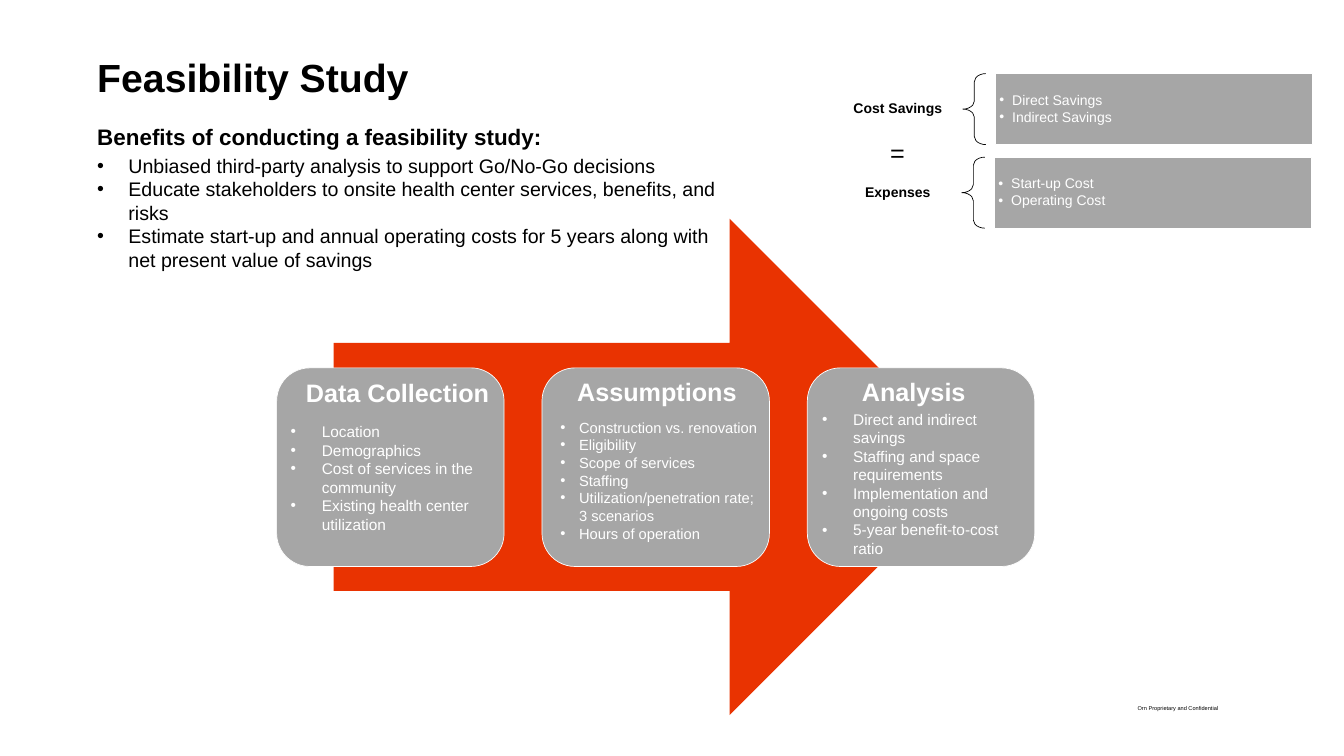
from lxml.etree import SubElement
from pptx import Presentation
from pptx.dml.color import RGBColor
from pptx.enum.shapes import MSO_SHAPE as Shape
from pptx.enum.text import MSO_ANCHOR as Anchor, MSO_AUTO_SIZE as AutoSize, PP_ALIGN as Align
from pptx.oxml.ns import qn
from pptx.util import Cm, Pt

ORANGE = RGBColor(0xE9, 0x33, 0x01)
GREY = RGBColor(0xA6, 0xA6, 0xA6)
WHITE = RGBColor(0xFF, 0xFF, 0xFF)
BLACK = RGBColor(0x00, 0x00, 0x00)

FONT = "Arial"
CARD_LEFT, CARD_TOP, CARD_WIDTH, CARD_HEIGHT = 13.94, 18.54, 11.46, 10.01
CARD_PITCH = 13.37
PANEL_HEIGHT = 3.58
WIDE_INSETS = (0.41, 0.15, 0.41, 0.15)
PANEL_INSETS = (0.2, 0.2, 0.2, 0.2)

BENEFITS = [
    "Unbiased third-party analysis to support Go/No-Go decisions",
    "Educate stakeholders to onsite health center services, benefits, and risks",
    "Estimate start-up and annual operating costs for 5 years along with net present value of savings",
]

CARDS = [
    {
        "heading": "Data Collection", "heading_box": (15.16, 18.87, 10.11, 1.8),
        "list_box": (14.4, 21.16, 10.57, 5.89), "size": 22, "indent": 1.57,
        "items": ["Location", "Demographics", "Cost of services in the community",
                  "Existing health center utilization"],
    },
    {
        "heading": "Assumptions", "heading_box": (28.83, 18.85, 9.78, 1.8),
        "list_box": (27.99, 20.96, 10.57, 8.97), "size": 21, "indent": 0.94,
        "items": ["Construction vs. renovation", "Eligibility", "Scope of services", "Staffing",
                  "Utilization/penetration rate; 3 scenarios", "Hours of operation"],
    },
    {
        "heading": "Analysis", "heading_box": (43.18, 18.85, 6.25, 1.8),
        "list_box": (41.17, 20.52, 10.95, 7.77), "size": 22, "indent": 1.57,
        "items": ["Direct and indirect savings", "Staffing and space requirements",
                  "Implementation and ongoing costs", "5-year benefit-to-cost ratio"],
    },
]

BALANCE = [
    ("Cost Savings", 3.71, 48.51, ["Direct Savings", "Indirect Savings"]),
    ("Expenses", 7.92, 48.46, ["Start-up Cost", "Operating Cost"]),
]


def set_values(target, values):
    for name, value in values.items():
        setattr(target, name, value)


def place(shape, box):
    names = ("left", "top", "width", "height")
    set_values(shape, dict(zip(names, map(Cm, box))))


def add_bullet(paragraph, indent):
    properties = paragraph._p.get_or_add_pPr()
    properties.set("marL", str(Cm(indent)))
    properties.set("indent", str(-Cm(indent)))
    SubElement(properties, qn("a:buFont"), typeface=FONT)
    SubElement(properties, qn("a:buChar"), char="•")


def write_text(shape, lines, size, color=BLACK, bold=False, indent=0, anchor=Anchor.TOP,
               insets=(0.25, 0.13, 0.25, 0.13), alignment=Align.LEFT, line_spacing=1.0, after=0):
    frame = shape.text_frame
    set_values(frame, {"word_wrap": True, "auto_size": AutoSize.NONE, "vertical_anchor": anchor})
    sides = ("margin_left", "margin_top", "margin_right", "margin_bottom")
    set_values(frame, dict(zip(sides, map(Cm, insets))))
    for index, line in enumerate(lines):
        paragraph = frame.add_paragraph() if index else frame.paragraphs[0]
        set_values(paragraph, {"alignment": alignment, "line_spacing": line_spacing,
                               "space_before": Pt(0), "space_after": Pt(after)})
        if indent:
            add_bullet(paragraph, indent)
        run = paragraph.add_run()
        run.text = line
        set_values(run.font, {"name": FONT, "size": Pt(size), "bold": bold})
        run.font.color.rgb = color


def add_text(slide, box, lines, size, **options):
    write_text(slide.shapes.add_textbox(*map(Cm, box)), lines, size, **options)


def add_figure(slide, kind, box, fill=None, line=None):
    shape = slide.shapes.add_shape(kind, *map(Cm, box))
    shape.shadow.inherit = False
    if fill is None:
        shape.fill.background()
    else:
        shape.fill.solid()
        shape.fill.fore_color.rgb = fill
    if line is None:
        shape.line.fill.background()
    else:
        shape.line.color.rgb = line
        shape.line.width = Pt(1)
    return shape


def add_card(slide, index, card):
    box = (CARD_LEFT + index * CARD_PITCH, CARD_TOP, CARD_WIDTH, CARD_HEIGHT)
    add_figure(slide, Shape.ROUNDED_RECTANGLE, box, GREY, WHITE)
    add_text(slide, card["heading_box"], [card["heading"]], 36, color=WHITE, bold=True)
    add_text(slide, card["list_box"], card["items"], card["size"], color=WHITE,
             indent=card["indent"])


def add_balance_row(slide, label, top, brace_left, items):
    add_text(slide, (41.99, top, 6.5, PANEL_HEIGHT), [label], 20, bold=True, anchor=Anchor.MIDDLE,
             insets=WIDE_INSETS, alignment=Align.CENTER, line_spacing=0.9, after=7)
    brace = add_figure(slide, Shape.LEFT_BRACE, (brace_left, top, 1.17, PANEL_HEIGHT), line=BLACK)
    brace.adjustments[0] = 0.35
    panel = add_figure(slide, Shape.RECTANGLE, (brace_left + 1.65, top, 15.97, PANEL_HEIGHT),
                       GREY, WHITE)
    write_text(panel, items, 20, color=WHITE, indent=0.64, anchor=Anchor.MIDDLE,
               insets=PANEL_INSETS, line_spacing=0.9, after=3)


def main():
    presentation = Presentation()
    set_values(presentation, {"slide_width": Cm(67.72), "slide_height": Cm(38.1)})
    slide = presentation.slides.add_slide(presentation.slide_layouts[1])
    title, body = slide.placeholders

    add_figure(slide, Shape.RIGHT_ARROW, (16.81, 11.02, 32.46, 25.02), ORANGE)
    for index, card in enumerate(CARDS):
        add_card(slide, index, card)

    place(title, (4.65, 2.54, 18.62, 2.64))
    write_text(title, ["Feasibility Study"], 56, bold=True)
    add_text(slide, (4.65, 6.05, 27.05, 1.63), ["Benefits of conducting a feasibility study:"],
             32, bold=True)
    place(body, (4.65, 7.62, 31.75, 6.25))
    write_text(body, BENEFITS, 28, indent=1.57)

    for row in BALANCE:
        add_balance_row(slide, *row)
    add_text(slide, (44.6, 6.81, 3, 1.8), ["="], 36)
    add_text(slide, (33.4, 34.87, 27.99, 1.63), ["Orn Proprietary and Confidential"], 8,
             anchor=Anchor.MIDDLE, insets=(0, 0, 0, 0), alignment=Align.RIGHT)
    presentation.save("out.pptx")


if __name__ == "__main__":
    main()
